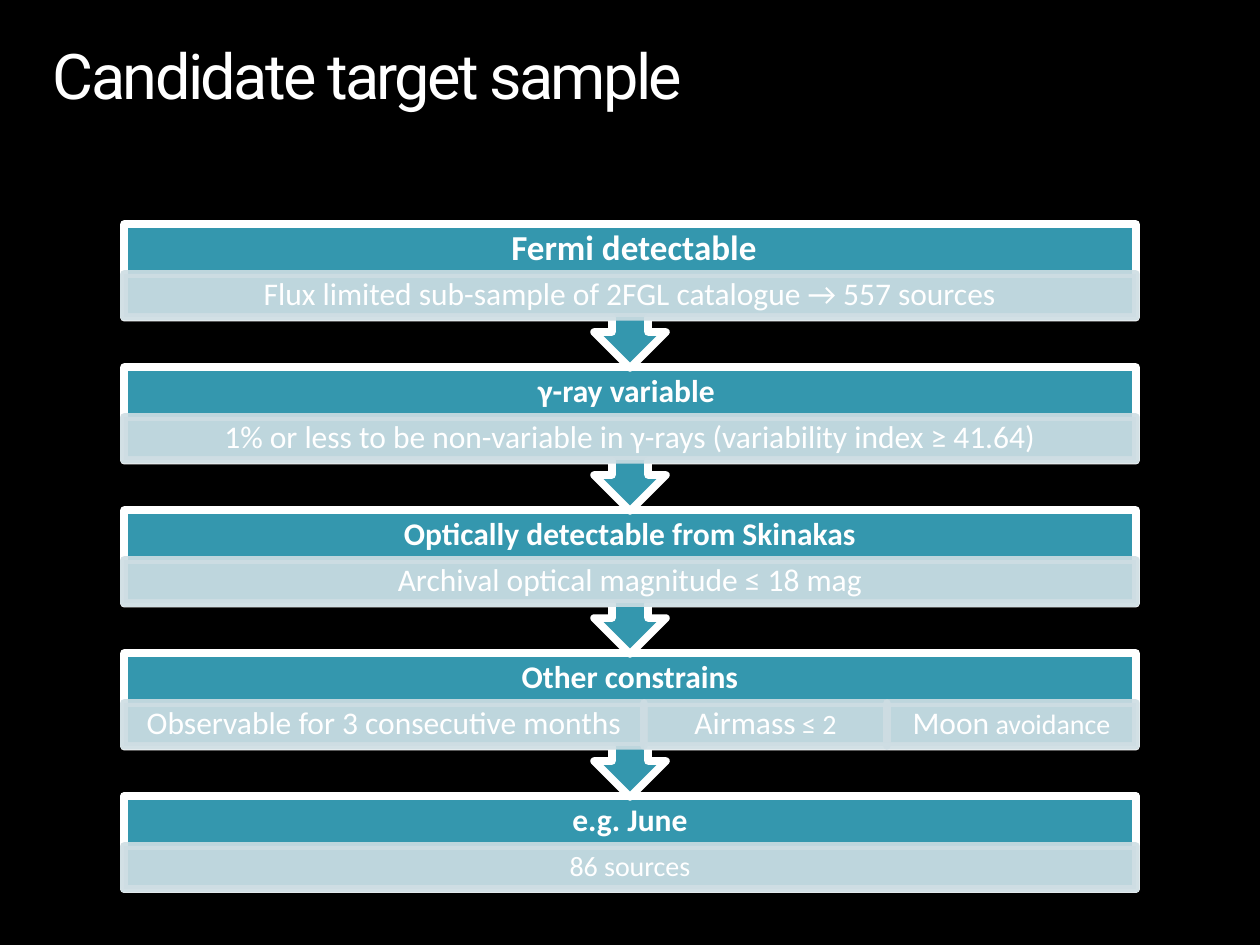
from dataclasses import dataclass

from lxml import etree
from pptx import Presentation
from pptx.dml.color import RGBColor
from pptx.enum.shapes import MSO_SHAPE
from pptx.enum.text import MSO_ANCHOR, MSO_AUTO_SIZE, PP_ALIGN
from pptx.oxml.ns import qn
from pptx.util import Emu, Pt

RECTANGLE = MSO_SHAPE.RECTANGLE
ARROW_CALLOUT = MSO_SHAPE.UP_ARROW_CALLOUT
LEFT, CENTER = PP_ALIGN.LEFT, PP_ALIGN.CENTER
TOP, MIDDLE = MSO_ANCHOR.TOP, MSO_ANCHOR.MIDDLE

BLACK = RGBColor(0x00, 0x00, 0x00)
WHITE = RGBColor(0xFF, 0xFF, 0xFF)
TEAL = RGBColor(0x34, 0x97, 0xAE)
PALE_BLUE = RGBColor(0xCE, 0xDD, 0xE3)

EMU_PER_PX = 914400 // 126
FLOW_LEFT, FLOW_TOP, FLOW_WIDTH = 124, 224, 1012
STAGE_STEP = 143
CALLOUT_HEIGHT, FINAL_HEIGHT = 144, 93
HEADER_HEIGHT, DETAIL_HEIGHT = 50, 43
OUTLINE_WIDTH = Pt(4.33)


@dataclass(frozen=True)
class Run:
    text: str
    size: int = 18
    bold: bool = False


@dataclass(frozen=True)
class Detail:
    runs: tuple[Run, ...]
    width: int = FLOW_WIDTH


@dataclass(frozen=True)
class Stage:
    header: tuple[Run, ...]
    details: tuple[Detail, ...]


STAGES = (
    Stage((Run(" ", 20), Run("Fermi detectable", 20, True)),
          (Detail((Run("Flux limited sub-sample of 2FGL catalogue → 557 sources"),)),)),
    Stage((Run("γ-ray variable ", bold=True),),
          (Detail((Run("1% or less to be non-variable in γ-rays (variability index ≥ 41.64)"),)),)),
    Stage((Run("Optically detectable from Skinakas", bold=True),),
          (Detail((Run("Archival optical magnitude ≤ 18 mag"),)),)),
    Stage((Run("Other constrains", bold=True),),
          (Detail((Run("Observable for 3 consecutive months"),), 520),
           Detail((Run("Airmass"), Run(" ≤ 2", 16)), 243),
           Detail((Run("Moon"), Run(" avoidance", 16)), 249))),
    Stage((Run("e.g. June", bold=True),),
          (Detail((Run("86 sources", 16),)),)),
)


def px(length: int) -> Emu:
    return Emu(length * EMU_PER_PX)


def write_text(shape, runs: tuple[Run, ...], *, font="Calibri", align=CENTER,
               anchor=MIDDLE, inset=0, spacing=0) -> None:
    """Fill a shape with one paragraph; spacing is in hundredths of a point."""
    frame = shape.text_frame
    frame.word_wrap = True
    frame.vertical_anchor = anchor
    frame.margin_left = frame.margin_right = px(inset)
    frame.margin_top = frame.margin_bottom = 0
    paragraph = frame.paragraphs[0]
    paragraph.alignment = align
    paragraph.line_spacing = 0.9
    for item in runs:
        run = paragraph.add_run()
        run.text = item.text
        run.font.name = font
        run.font.size = Pt(item.size)
        run.font.bold = item.bold
        run.font.color.rgb = WHITE
        if spacing:
            run.font._element.set("spc", str(spacing))


def add_block(slide, kind, left: int, top: int, width: int, height: int,
              fill: RGBColor, outline: RGBColor, opacity: int = 100):
    shape = slide.shapes.add_shape(kind, px(left), px(top), px(width), px(height))
    shape.shadow.inherit = False
    shape.fill.solid()
    shape.fill.fore_color.rgb = fill
    shape.line.color.rgb = outline
    shape.line.width = OUTLINE_WIDTH
    if opacity < 100:
        for color in shape._element.spPr.iter(qn("a:srgbClr")):
            etree.SubElement(color, qn("a:alpha")).set("val", str(opacity * 1000))
    return shape


def add_stage(slide, stage: Stage, top: int, is_final: bool) -> None:
    if is_final:
        add_block(slide, RECTANGLE, FLOW_LEFT, top, FLOW_WIDTH, FINAL_HEIGHT, TEAL, WHITE)
    else:
        callout = add_block(slide, ARROW_CALLOUT, FLOW_LEFT, top, FLOW_WIDTH,
                            CALLOUT_HEIGHT, TEAL, WHITE)
        callout.rotation = 180
    header = slide.shapes.add_textbox(px(FLOW_LEFT), px(top), px(FLOW_WIDTH), px(HEADER_HEIGHT))
    write_text(header, stage.header, inset=18)

    left = FLOW_LEFT
    for detail in stage.details:
        block = add_block(slide, RECTANGLE, left, top + HEADER_HEIGHT, detail.width,
                          DETAIL_HEIGHT, PALE_BLUE, PALE_BLUE, opacity=90)
        write_text(block, detail.runs, inset=18)
        left += detail.width


def main() -> None:
    presentation = Presentation()
    presentation.slide_width, presentation.slide_height = px(1260), px(945)
    slide = presentation.slides.add_slide(presentation.slide_layouts.get_by_name("Title Only"))
    slide.background.fill.solid()
    slide.background.fill.fore_color.rgb = BLACK

    title = slide.shapes.title
    title.left, title.top, title.width, title.height = px(53), px(45), px(1155), px(69)
    title.text_frame.auto_size = MSO_AUTO_SIZE.SHAPE_TO_FIT_TEXT
    write_text(title, (Run("Candidate target sample", 36),), font="Roboto",
               align=LEFT, anchor=TOP, spacing=-150)

    # Later stages go first so that each arrow overlaps the stage below it.
    final = len(STAGES) - 1
    for index in range(final, -1, -1):
        add_stage(slide, STAGES[index], FLOW_TOP + index * STAGE_STEP, index == final)

    presentation.save("out.pptx")


if __name__ == "__main__":
    main()
